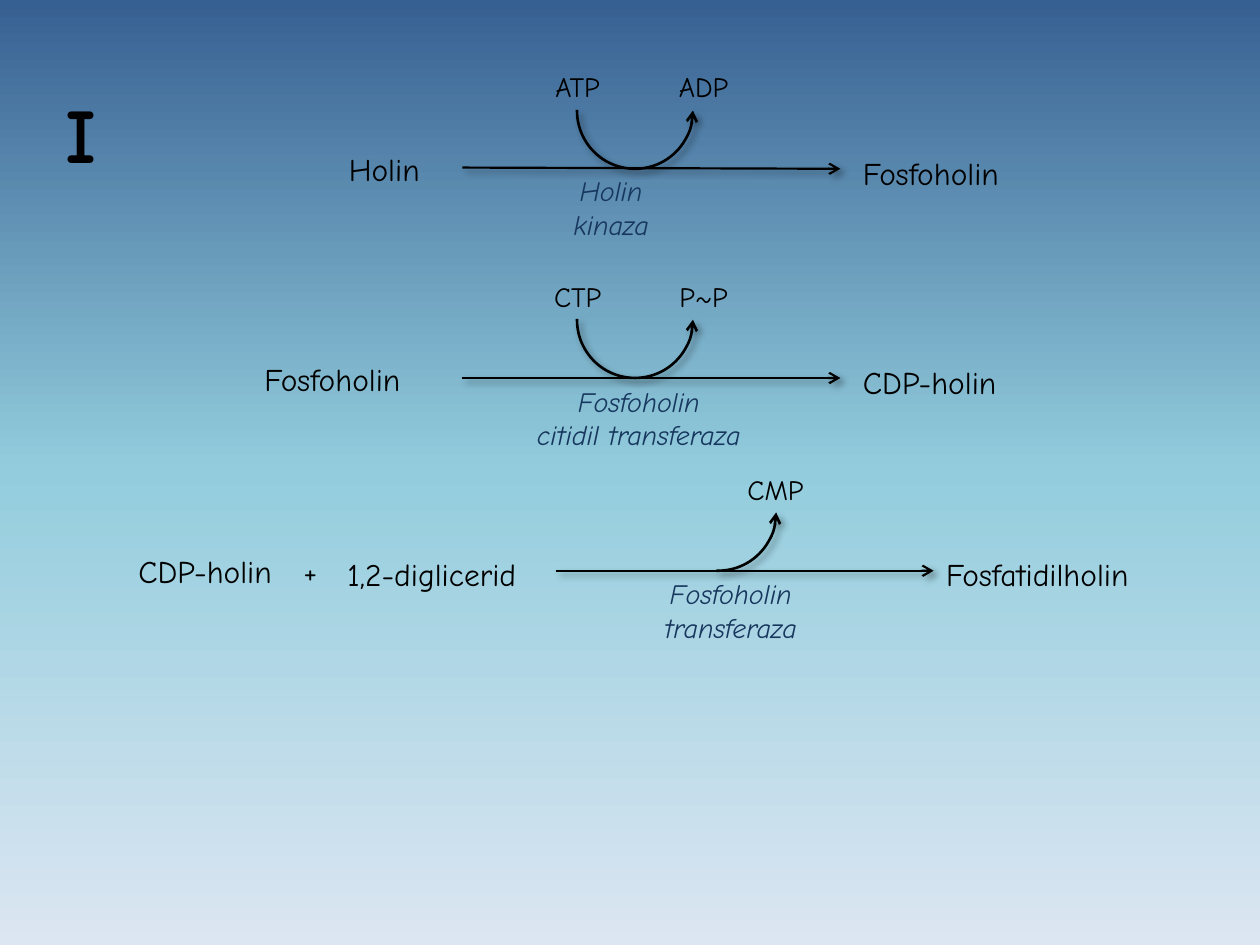
from copy import deepcopy
from dataclasses import dataclass

from lxml.etree import SubElement
from pptx import Presentation
from pptx.dml.color import RGBColor
from pptx.enum.shapes import MSO_CONNECTOR as Connector, MSO_SHAPE as Shape
from pptx.enum.text import MSO_AUTO_SIZE as AutoSize, PP_ALIGN as Align
from pptx.oxml.ns import qn
from pptx.util import Inches, Pt

FONT = "Comic Neue"
COLORS = {
    "ink": "000000",
    "enzyme": "17375E",
    "sky_top": "376092",
    "sky_middle": "93CDDD",
    "sky_bottom": "DCE6F2",
}
ARROW_LENGTH = 3
ARC_SIZE = 0.92
HALF_TURN, QUARTER_TURN = 181.03, 91.7  # where the arc ends, in degrees
ARC_START = 359.67


@dataclass
class Label:
    text: str
    left: float
    top: float
    width: float
    height: float = 0.4
    size: int = 18
    color: str = "ink"
    bold: bool = False
    italic: bool = False
    centered: bool = False
    wrap: bool = False
    tab: float = 0


@dataclass
class Reaction:
    arrow_left: float
    arrow_top: float
    arc_left: float
    arc_end: float
    compounds: list[Label]
    cofactors: list[tuple[str, float]]  # text and left edge
    enzyme: str
    enzyme_left: float
    enzyme_width: float
    drop: float = 0  # fall of the arrow over its length


REACTIONS = [
    Reaction(3.67, 1.33, 4.58, HALF_TURN,
             [Label("Holin", 2.67, 1.14, 0.8), Label("Fosfoholin", 6.75, 1.17, 1.42)],
             [("ATP", 4.25), ("ADP", 5.25)],
             "Holin\nkinaza", 4.42, 0.86, drop=0.01),
    Reaction(3.67, 3, 4.58, HALF_TURN,
             [Label("Fosfoholin", 2, 2.81, 1.42), Label("CDP-holin", 6.75, 2.83, 1.32)],
             [("CTP", 4.25), ("P~P", 5.25)],
             "Fosfoholin\ncitidil transferaza", 4, 2.14),
    Reaction(4.41, 4.53, 5.24, QUARTER_TURN,
             [Label("CDP-holin\t+", 1, 4.33, 1.67, tab=1.31),
              Label("1,2-diglicerid", 2.66, 4.36, 1.74),
              Label("Fosfatidilholin", 7.41, 4.36, 1.89)],
             [("CMP", 5.82)],
             "Fosfoholin\ntransferaza", 5.07, 1.46),
]


def rgb(name: str) -> RGBColor:
    return RGBColor.from_string(COLORS[name])


def paint_background(slide) -> None:
    fill = slide.background.fill
    fill.gradient()
    fill.gradient_angle = 270
    stop_list = slide._element.find(".//" + qn("a:gsLst"))
    stop_list.insert(1, deepcopy(stop_list[0]))
    names = ("sky_top", "sky_middle", "sky_bottom")
    for stop, name, position in zip(fill.gradient_stops, names, (0, 0.5, 1)):
        stop.color.rgb = rgb(name)
        stop.position = position


def add_label(slide, label: Label) -> None:
    box = slide.shapes.add_textbox(Inches(label.left), Inches(label.top),
                                   Inches(label.width), Inches(label.height))
    frame = box.text_frame
    frame.word_wrap = label.wrap
    frame.auto_size = AutoSize.NONE if label.wrap else AutoSize.SHAPE_TO_FIT_TEXT
    for index, line in enumerate(label.text.split("\n")):
        paragraph = frame.add_paragraph() if index else frame.paragraphs[0]
        paragraph.alignment = Align.CENTER if label.centered else Align.LEFT
        if label.tab:
            tabs = SubElement(paragraph._p.get_or_add_pPr(), qn("a:tabLst"))
            SubElement(tabs, qn("a:tab"), pos=str(Inches(label.tab)), algn="l")
        run = paragraph.add_run()
        run.text = line
        font = run.font
        font.name, font.size = FONT, Pt(label.size)
        font.bold, font.italic = label.bold, label.italic
        font.color.rgb = rgb(label.color)


def style_line(shape, width: float, arrow_end: str) -> None:
    """Black line with one open arrowhead and a soft shadow."""
    shape.line.color.rgb = rgb("ink")
    shape.line.width = Pt(width)
    SubElement(shape.line._get_or_add_ln(), qn(arrow_end), type="arrow")
    effects = SubElement(shape._element.spPr, qn("a:effectLst"))
    shadow = SubElement(effects, qn("a:outerShdw"), blurRad=str(Pt(4)), dist=str(Pt(3)),
                        dir=str(45 * 60000), algn="tl", rotWithShape="0")
    color = SubElement(shadow, qn("a:srgbClr"), val=COLORS["ink"])
    SubElement(color, qn("a:alpha"), val="40000")


def add_reaction(slide, reaction: Reaction) -> None:
    left, top = reaction.arrow_left, reaction.arrow_top

    # Reaction arrow
    arrow = slide.shapes.add_connector(
        Connector.STRAIGHT, Inches(left), Inches(top),
        Inches(left + ARROW_LENGTH), Inches(top + reaction.drop))
    style_line(arrow, 1.25, "a:tailEnd")

    # Cofactor arc resting on the arrow
    arc = slide.shapes.add_shape(
        Shape.ARC, Inches(reaction.arc_left), Inches(top + reaction.drop - ARC_SIZE),
        Inches(ARC_SIZE), Inches(ARC_SIZE))
    for index, degrees in enumerate((ARC_START, reaction.arc_end)):
        arc.adjustments[index] = degrees * 0.6
    arc.fill.background()
    style_line(arc, 1.5, "a:headEnd")

    # Compounds, cofactors and enzyme
    for compound in reaction.compounds:
        add_label(slide, compound)
    for text, cofactor_left in reaction.cofactors:
        add_label(slide, Label(text, cofactor_left, top - 0.83, 0.67, 0.42, 16,
                               centered=True, wrap=True))
    add_label(slide, Label(reaction.enzyme, reaction.enzyme_left, top,
                           reaction.enzyme_width, 0.64, 16, "enzyme",
                           italic=True, centered=True))


def main() -> None:
    presentation = Presentation()
    presentation.slide_width, presentation.slide_height = Inches(10), Inches(7.5)
    slide = presentation.slides.add_slide(presentation.slide_layouts[6])
    paint_background(slide)
    add_label(slide, Label("I", 0.42, 0.64, 0.54, 0.84, 44, bold=True))
    for reaction in REACTIONS:
        add_reaction(slide, reaction)
    presentation.save("out.pptx")


if __name__ == "__main__":
    main()
